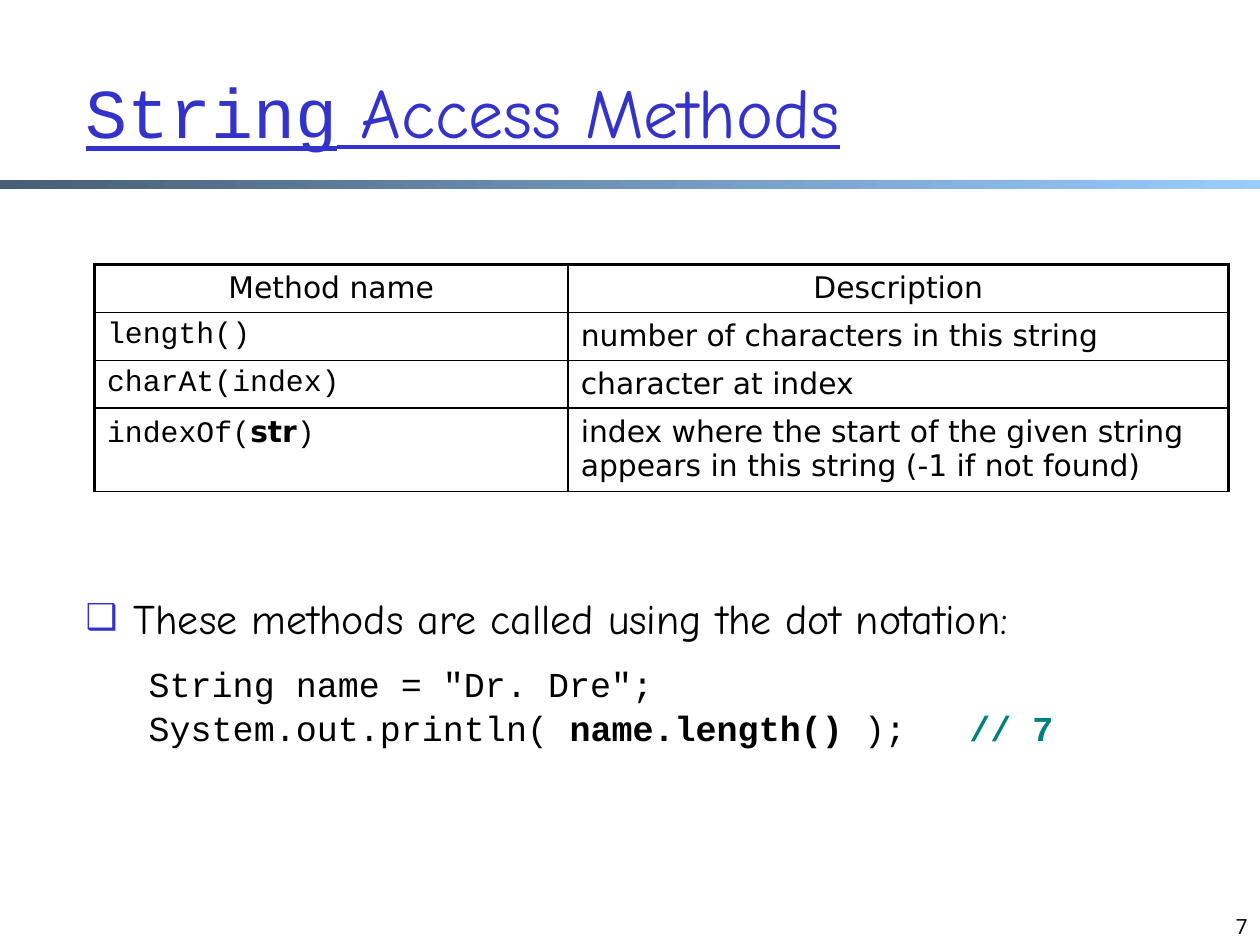
from dataclasses import dataclass

from lxml.etree import SubElement
from pptx import Presentation
from pptx.dml.color import RGBColor
from pptx.enum.shapes import MSO_SHAPE
from pptx.enum.text import MSO_ANCHOR, MSO_AUTO_SIZE, PP_ALIGN
from pptx.oxml import parse_xml
from pptx.oxml.ns import nsdecls, qn
from pptx.util import Inches, Pt


@dataclass(frozen=True)
class Theme:
    ink: str = "000000"
    accent: str = "3333CC"
    comment: str = "008080"
    rule_start: str = "475E76"
    rule_end: str = "99CCFF"
    code_font: str = "Courier New"
    hand_font: str = "Comic Neue"
    table_font: str = "DejaVu Sans"
    number_font: str = "Roboto"
    title_size: int = 40
    lead_size: int = 24
    code_size: int = 20
    table_size: int = 17
    number_size: int = 12
    thin: float = 1
    thick: float = 2.25


THEME = Theme()
WIDTH, HEIGHT = Inches(10), Inches(7.5)

COLUMNS = (3.76, 5.24)
LINE_HEIGHT, CELL_PADDING = 0.28, 0.1
METHODS = [
    ([("length()", THEME.code_font, False)], "number of characters in this string", 1),
    ([("charAt(index)", THEME.code_font, False)], "character at index", 1),
    (
        [
            ("indexOf(", THEME.code_font, False),
            ("str", THEME.table_font, True),
            (")", THEME.code_font, False),
        ],
        "index where the start of the given string appears in this string (-1 if not found)",
        2,
    ),
]
CODE_LINES = [
    (16, [('String name = "Dr. Dre";', False, THEME.ink)]),
    (
        6,
        [
            ("System.out.println( ", False, THEME.ink),
            ("name.length() ", True, THEME.ink),
            (");   ", False, THEME.ink),
            ("// 7", True, THEME.comment),
        ],
    ),
]


def apply(target, values):
    for key, value in values.items():
        setattr(target, key, value)


def share(left, top, width, height):
    return {
        "left": int(WIDTH * left),
        "top": int(HEIGHT * top),
        "width": int(WIDTH * width),
        "height": int(HEIGHT * height),
    }


def write(paragraph, wording, font, size, color=THEME.ink, bold=False, underline=False):
    run = paragraph.add_run()
    run.text = wording
    apply(run.font, {"name": font, "size": Pt(size), "bold": bold, "underline": underline})
    run.font.color.rgb = RGBColor.from_string(color)


def set_bullet(paragraph, margin, indent, mark=None):
    properties = paragraph._p.get_or_add_pPr()
    properties.set("marL", str(Inches(margin)))
    properties.set("indent", str(Inches(indent)))
    if mark is None:
        SubElement(properties, qn("a:buNone"))
        return
    color = SubElement(properties, qn("a:buClr"))
    SubElement(color, qn("a:srgbClr")).set("val", THEME.accent)
    SubElement(properties, qn("a:buSzPct")).set("val", "85000")
    SubElement(properties, qn("a:buChar")).set("char", mark)


def set_borders(cell, widths):
    properties = cell._tc.get_or_add_tcPr()
    for position, (side, width) in enumerate(widths.items()):
        border = parse_xml(
            f'<a:ln{side} {nsdecls("a")} w="{Pt(width)}"><a:solidFill>'
            f'<a:srgbClr val="{THEME.ink}"/></a:solidFill></a:ln{side}>'
        )
        properties.insert(position, border)


def add_rule(slide):
    rule = slide.shapes.add_shape(MSO_SHAPE.RECTANGLE, **share(0, 0.19, 1, 0.01))
    rule.shadow.inherit = False
    rule.line.fill.background()
    rule.fill.gradient()
    rule.fill.gradient_angle = 0
    for stop, color in zip(rule.fill.gradient_stops, (THEME.rule_start, THEME.rule_end)):
        stop.color.rgb = RGBColor.from_string(color)


def fill_title(title):
    apply(title, share(0.058, 0.033, 0.908, 0.167))
    apply(title.text_frame, {"vertical_anchor": MSO_ANCHOR.MIDDLE, "auto_size": MSO_AUTO_SIZE.NONE})
    heading = title.text_frame.paragraphs[0]
    heading.alignment = PP_ALIGN.LEFT
    for wording, font in (("String", THEME.code_font), (" Access Methods", THEME.hand_font)):
        write(heading, wording, font, THEME.title_size, THEME.accent, underline=True)


def fill_body(body):
    apply(body, share(0.058, 0.62, 0.85, 0.29))
    body.text_frame.auto_size = MSO_AUTO_SIZE.NONE
    lead = body.text_frame.paragraphs[0]
    lead.space_before = Pt(0)
    set_bullet(lead, 0.38, -0.38, "❑")
    write(lead, "These methods are called using the dot notation:", THEME.hand_font, THEME.lead_size)
    for gap, parts in CODE_LINES:
        code = body.text_frame.add_paragraph()
        apply(code, {"level": 1, "line_spacing": 0.8, "space_before": Pt(gap)})
        set_bullet(code, 0.81, -0.31)
        for wording, bold, color in parts:
            write(code, wording, THEME.code_font, THEME.code_size, color, bold)


def add_methods_table(slide):
    plain = THEME.table_font
    rows = [([("Method name", plain, False)], "Description", 1)] + METHODS
    heights = [Inches(lines * LINE_HEIGHT + CELL_PADDING) for _, _, lines in rows]
    table = slide.shapes.add_table(
        len(rows), len(COLUMNS), int(WIDTH * 0.075), int(HEIGHT * 0.28),
        Inches(sum(COLUMNS)), sum(heights),
    ).table
    apply(table, {"first_row": False, "horz_banding": False})
    for column, width in zip(table.columns, COLUMNS):
        column.width = Inches(width)
    for row, (method, description, _) in enumerate(rows):
        table.rows[row].height = heights[row]
        for column, parts in enumerate((method, [(description, plain, False)])):
            cell = table.cell(row, column)
            cell.fill.background()
            set_borders(cell, {
                "L": THEME.thick if column == 0 else THEME.thin,
                "R": THEME.thick if column == len(COLUMNS) - 1 else THEME.thin,
                "T": THEME.thick if row == 0 else THEME.thin,
                "B": THEME.thin,
            })
            entry = cell.text_frame.paragraphs[0]
            entry.alignment = PP_ALIGN.CENTER if row == 0 else PP_ALIGN.LEFT
            for wording, font, bold in parts:
                write(entry, wording, font, THEME.table_size, bold=bold)


def add_page_number(slide):
    frame = slide.shapes.add_textbox(**share(0.767, 0.933, 0.233, 0.067)).text_frame
    apply(frame, {"word_wrap": True, "vertical_anchor": MSO_ANCHOR.BOTTOM})
    number = frame.paragraphs[0]
    number.alignment = PP_ALIGN.RIGHT
    write(number, "7", THEME.number_font, THEME.number_size)


def main():
    deck = Presentation()
    apply(deck, {"slide_width": WIDTH, "slide_height": HEIGHT})
    slide = deck.slides.add_slide(deck.slide_layouts[1])
    add_rule(slide)
    fill_title(slide.shapes.title)
    fill_body(slide.placeholders[1])
    add_methods_table(slide)
    add_page_number(slide)
    deck.save("out.pptx")


if __name__ == "__main__":
    main()
